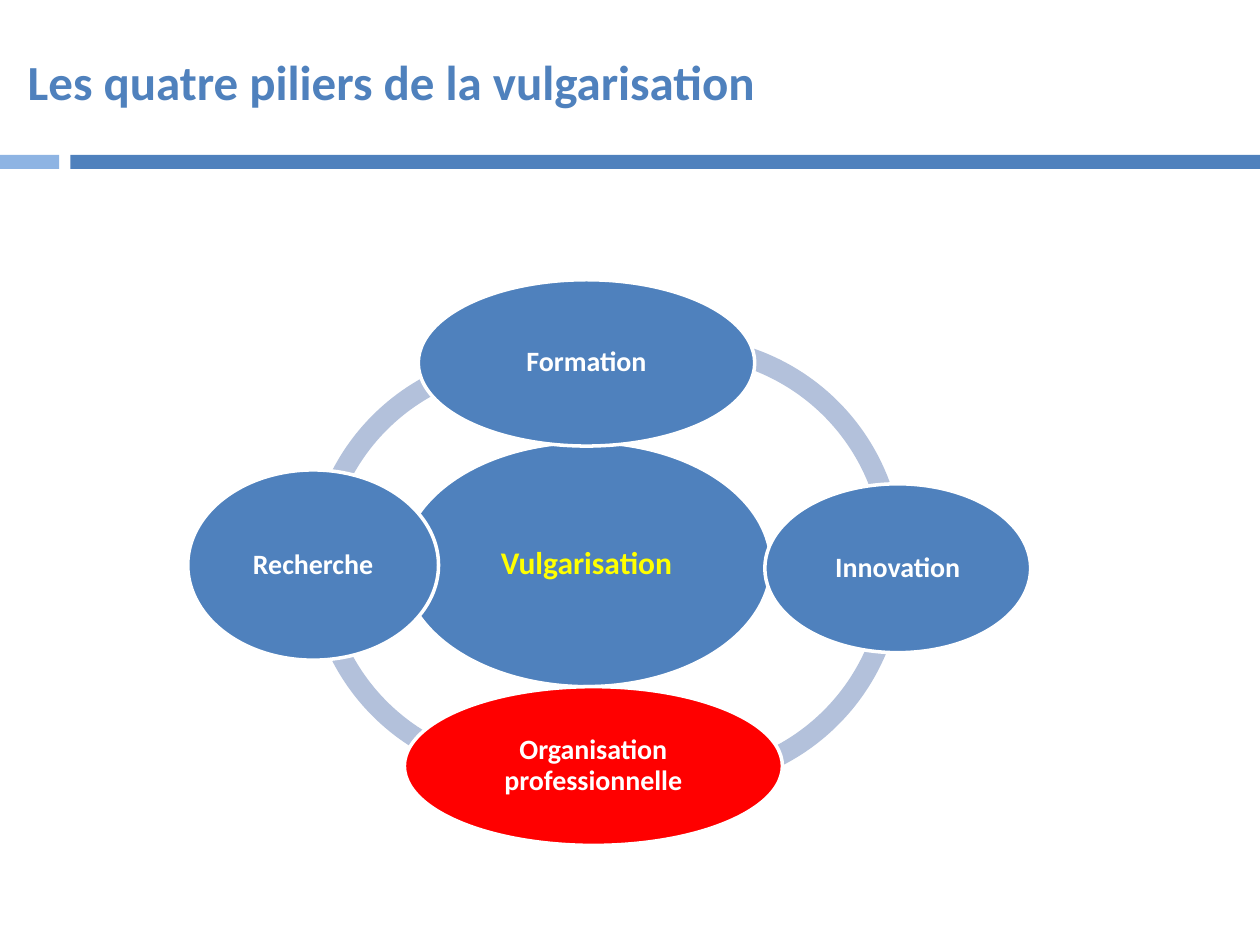
from pptx import Presentation
from pptx.dml.color import RGBColor
from pptx.enum.shapes import MSO_SHAPE
from pptx.enum.text import MSO_ANCHOR, MSO_AUTO_SIZE, PP_ALIGN
from pptx.util import Inches, Pt

RECTANGLE = MSO_SHAPE.RECTANGLE
ELLIPSE = MSO_SHAPE.OVAL
BLOCK_ARC = MSO_SHAPE.BLOCK_ARC
MIDDLE = MSO_ANCHOR.MIDDLE
NO_AUTOFIT = MSO_AUTO_SIZE.NONE
LEFT = PP_ALIGN.LEFT
CENTER = PP_ALIGN.CENTER

BLUE = RGBColor(0x4F, 0x81, 0xBD)
LIGHT_BLUE = RGBColor(0x8E, 0xB4, 0xE3)
RING_BLUE = RGBColor(0xB3, 0xC1, 0xDB)
RED = RGBColor(0xFF, 0x00, 0x00)
YELLOW = RGBColor(0xFF, 0xFF, 0x00)
WHITE = RGBColor(0xFF, 0xFF, 0xFF)

FONT = "Calibri"
TITLE_ONLY = 5
RING_SIZE = 3.53
RING_THICKNESS = 0.046

RING_ARCS = [
    (2.44, 2.78, 109.21, 171.11),
    (2.44, 2.67, 43.76, 107.1),
    (3.64, 2.74, 0.03, 68.29),
    (3.64, 2.67, 146.47, 1.59),
]
PILLARS = [
    ("Formation", (3.32, 2.22, 2.67, 1.32), BLUE),
    ("Innovation", (6.07, 3.84, 2.11, 1.34), BLUE),
    ("Organisation professionnelle", (3.21, 5.45, 3, 1.26), RED),
    ("Recherche", (1.49, 3.73, 1.99, 1.51), BLUE),
]


def write_text(shape, text, *, size, color, align, inset=None, line_spacing=None):
    frame = shape.text_frame
    frame.word_wrap = True
    frame.auto_size = NO_AUTOFIT
    frame.vertical_anchor = MIDDLE
    if inset is not None:
        frame.margin_left = frame.margin_right = Inches(inset)
        frame.margin_top = frame.margin_bottom = Inches(inset)
    paragraph = frame.paragraphs[0]
    paragraph.alignment = align
    paragraph.line_spacing = line_spacing
    run = paragraph.add_run()
    run.text = text
    run.font.name = FONT
    run.font.size = Pt(size)
    run.font.bold = True
    run.font.color.rgb = color


class SlideBuilder:
    def __init__(self, slide):
        self.slide = slide

    def title(self, text, box):
        shape = self.slide.shapes.title
        shape.left, shape.top, shape.width, shape.height = map(Inches, box)
        write_text(shape, text, size=28, color=BLUE, align=LEFT)

    def filled_shape(self, kind, box, fill):
        shape = self.slide.shapes.add_shape(kind, *map(Inches, box))
        shape.shadow.inherit = False
        shape.fill.solid()
        shape.fill.fore_color.rgb = fill
        shape.line.fill.background()
        return shape

    def bar(self, box, fill):
        self.filled_shape(RECTANGLE, box, fill)

    def ring_arc(self, left, top, start, end):
        arc = self.filled_shape(BLOCK_ARC, (left, top, RING_SIZE, RING_SIZE), RING_BLUE)
        for index, value in enumerate((start, end, RING_THICKNESS)):
            arc.adjustments[index] = value

    def ellipse(self, text, box, fill, size=16, color=WHITE, inset=0.02):
        shape = self.filled_shape(ELLIPSE, box, fill)
        shape.line.color.rgb = WHITE
        shape.line.width = Pt(2)
        write_text(shape, text, size=size, color=color, align=CENTER,
                   inset=inset, line_spacing=0.9)


def main():
    presentation = Presentation()
    presentation.slide_width = Inches(10)
    presentation.slide_height = Inches(7.5)
    layout = presentation.slide_layouts[TITLE_ONLY]
    builder = SlideBuilder(presentation.slides.add_slide(layout))

    builder.bar((0.56, 1.23, 9.44, 0.11), BLUE)
    builder.bar((0, 1.23, 0.47, 0.11), LIGHT_BLUE)
    builder.title("Les quatre piliers de la vulgarisation", (0.12, 0.13, 9.38, 1.02))

    for arc in RING_ARCS:
        builder.ring_arc(*arc)
    builder.ellipse("Vulgarisation", (3.19, 3.51, 2.93, 1.94), BLUE,
                    size=18, color=YELLOW, inset=0.03)
    for pillar in PILLARS:
        builder.ellipse(*pillar)

    presentation.save("out.pptx")


if __name__ == "__main__":
    main()
